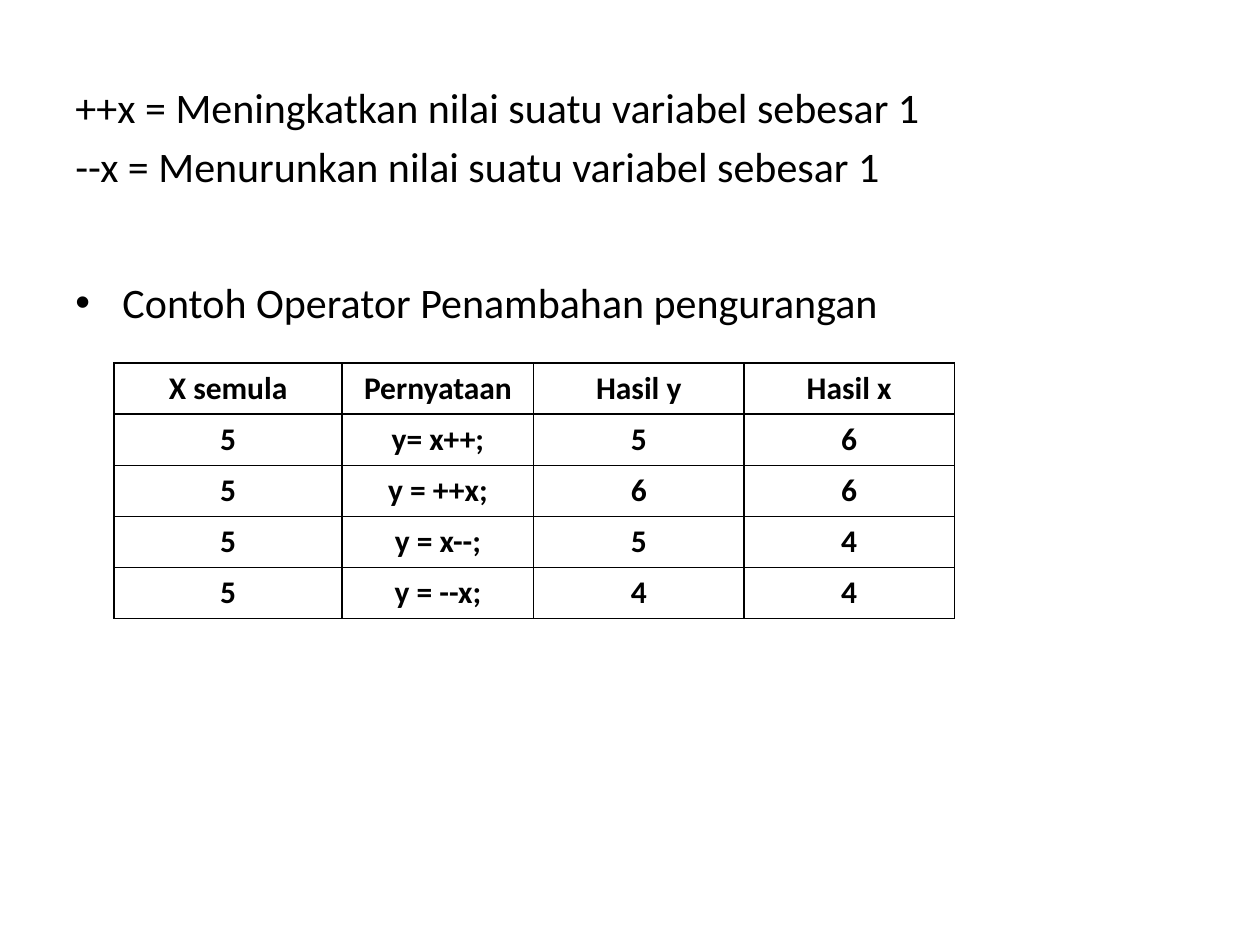
from lxml.etree import SubElement
from pptx import Presentation
from pptx.dml.color import RGBColor
from pptx.enum.text import MSO_ANCHOR, PP_ALIGN
from pptx.oxml.ns import qn
from pptx.util import Cm, Pt

# Content: (text, space before in points, bulleted)
LINES = [
    ("++x = Meningkatkan nilai suatu variabel sebesar 1", 0, False),
    ("--x = Menurunkan nilai suatu variabel sebesar 1", 4.8, False),
    ("Contoh Operator Penambahan pengurangan", 49, True),
]
RESULTS = [
    ("X semula", "Pernyataan", "Hasil y", "Hasil x"),
    ("5", "y= x++;", "5", "6"),
    ("5", "y = ++x;", "6", "6"),
    ("5", "y = x--;", "5", "4"),
    ("5", "y = --x;", "4", "4"),
]
COLUMN_WIDTHS = [4.6, 3.86, 4.24, 4.24]
ROW_HEIGHT = 1.03
BULLET_INDENT = Cm(0.95)
BORDER_WIDTH = Pt(1)
FONT = "Calibri"
BLACK = RGBColor(0, 0, 0)


def style_runs(para, size, bold=False):
    for span in para.runs:
        span.font.name = FONT
        span.font.size = Pt(size)
        span.font.bold = bold
        span.font.color.rgb = BLACK


def add_bullet(para):
    properties = para._p.get_or_add_pPr()
    properties.set("marL", str(BULLET_INDENT))
    properties.set("indent", str(-BULLET_INDENT))
    SubElement(properties, qn("a:buFont"), typeface="Arial")
    SubElement(properties, qn("a:buChar"), char="•")


def add_borders(cell):
    properties = cell._tc.get_or_add_tcPr()
    for side in ("a:lnL", "a:lnR", "a:lnT", "a:lnB"):
        line = SubElement(properties, qn(side), w=str(BORDER_WIDTH))
        fill = SubElement(line, qn("a:solidFill"))
        SubElement(fill, qn("a:srgbClr"), val=str(BLACK))


deck = Presentation()
deck.slide_width, deck.slide_height = Cm(25.4), Cm(19.05)
page = deck.slides.add_slide(deck.slide_layouts[6])

# Explanation text
box = page.shapes.add_textbox(Cm(1.27), Cm(1.52), Cm(22.86), Cm(16.41))
frame = box.text_frame
frame.word_wrap = True
frame.text = "\n".join(text for text, _, _ in LINES)
for para, (_, space, bulleted) in zip(frame.paragraphs, LINES):
    para.space_before = Pt(space)
    style_runs(para, 24)
    if bulleted:
        add_bullet(para)

# Table of results
table = page.shapes.add_table(
    len(RESULTS), len(COLUMN_WIDTHS), Cm(2.3), Cm(7.32),
    Cm(sum(COLUMN_WIDTHS)), Cm(ROW_HEIGHT * len(RESULTS))).table
table.first_row = table.horz_banding = False
for column, width in zip(table.columns, COLUMN_WIDTHS):
    column.width = Cm(width)
for row, values in zip(table.rows, RESULTS):
    row.height = Cm(ROW_HEIGHT)
    for cell, value in zip(row.cells, values):
        cell.text = value
        cell.vertical_anchor = MSO_ANCHOR.TOP
        para = cell.text_frame.paragraphs[0]
        para.alignment = PP_ALIGN.CENTER
        style_runs(para, 18, bold=True)
        add_borders(cell)
        cell.fill.background()

deck.save("out.pptx")
